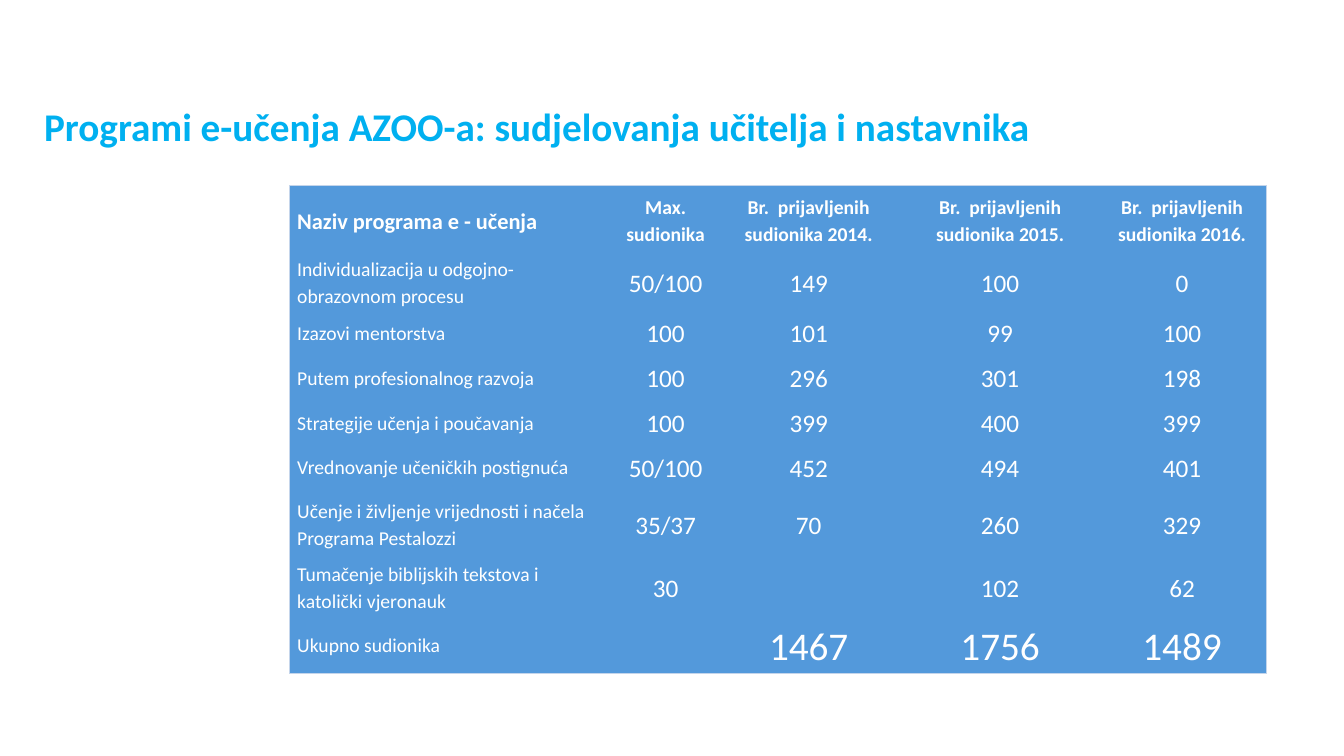
from dataclasses import dataclass

from lxml.etree import SubElement
from pptx import Presentation
from pptx.dml.color import RGBColor
from pptx.enum.text import MSO_ANCHOR, MSO_AUTO_SIZE, PP_ALIGN
from pptx.oxml.ns import qn
from pptx.util import Cm, Pt


@dataclass(frozen=True)
class Theme:
    font: str = "Calibri"
    title: str = "00B0F0"
    fill: str = "5399DB"
    edge: str = "C4D5EB"
    text: str = "FFFFFF"
    big: int = 28
    value: int = 18
    head: int = 16
    small: int = 14
    plain: str = "{2D5ABB26-0587-4C30-8999-92F81FD0307C}"  # no style, no grid


HEAD = ["Naziv programa e - učenja", "Max. sudionika"] + [
    f"Br.  prijavljenih sudionika {year}." for year in (2014, 2015, 2016)]
ROWS = [
    HEAD,
    ["Individualizacija u odgojno-obrazovnom procesu", "50/100", "149", "100", "0"],
    ["Izazovi mentorstva", "100", "101", "99", "100"],
    ["Putem profesionalnog razvoja", "100", "296", "301", "198"],
    ["Strategije učenja i poučavanja", "100", "399", "400", "399"],
    ["Vrednovanje učeničkih postignuća", "50/100", "452", "494", "401"],
    ["Učenje i življenje vrijednosti i načela Programa Pestalozzi",
     "35/37", "70", "260", "329"],
    ["Tumačenje biblijskih tekstova i katolički vjeronauk", "30", "", "102", "62"],
    ["Ukupno sudionika", "", "1467", "1756", "1489"],
]
WIDTHS = [8.23, 2.49, 4.72, 4.93, 4.24]
HEIGHTS = [1.7, 1.42] + [1.13] * 4 + [1.75, 1.42, 1.47]


def put(frame, text, *, font, size, color, bold=False,
        align=PP_ALIGN.LEFT, space=1.0):
    """Write one formatted paragraph into a text frame."""
    para = frame.paragraphs[0]
    para.alignment = align
    para.line_spacing = space
    para.space_before = Pt(0)
    run = para.add_run()
    run.text = text
    run.font.name = font
    run.font.size = Pt(size)
    run.font.bold = bold
    run.font.color.rgb = RGBColor.from_string(color)


class Deck:
    def __init__(self, theme):
        self.theme = theme
        self.file = Presentation()
        self.file.slide_width = Cm(33.87)
        self.file.slide_height = Cm(19.05)
        self.slide = self.file.slides.add_slide(self.file.slide_layouts[5])

    def title(self, text, left, top, width, height):
        box = self.slide.shapes.title
        box.left, box.top = Cm(left), Cm(top)
        box.width, box.height = Cm(width), Cm(height)
        frame = box.text_frame
        frame.word_wrap = True
        frame.auto_size = MSO_AUTO_SIZE.SHAPE_TO_FIT_TEXT
        frame.vertical_anchor = MSO_ANCHOR.TOP
        put(frame, text, font=self.theme.font, size=self.theme.big,
            color=self.theme.title, bold=True)

    def edge(self, cell, side):
        props = cell._tc.get_or_add_tcPr()
        line = SubElement(props, qn(f"a:ln{side}"), w=str(Pt(0.5)))
        fill = SubElement(line, qn("a:solidFill"))
        SubElement(fill, qn("a:srgbClr"), val=self.theme.edge)

    def size(self, row, col, last):
        if col == 0:
            return self.theme.head if row == 0 else self.theme.small
        if row == 0:
            return self.theme.small
        return self.theme.big if row == last else self.theme.value

    def table(self, rows, left, top, widths, heights):
        frame = self.slide.shapes.add_table(
            len(rows), len(widths), Cm(left), Cm(top),
            Cm(sum(widths)), Cm(sum(heights)))
        for style in frame.element.iter(qn("a:tableStyleId")):
            style.text = self.theme.plain
        grid = frame.table
        grid.first_row = grid.horz_banding = False
        for col, width in zip(grid.columns, widths):
            col.width = Cm(width)
        for row, height in zip(grid.rows, heights):
            row.height = Cm(height)

        end, last = len(widths) - 1, len(rows) - 1
        for r, row in enumerate(rows):
            for c, text in enumerate(row):
                cell = grid.cell(r, c)
                # Outer border only
                outer = {"L": c == 0, "R": c == end, "T": r == 0, "B": r == last}
                for side, shown in outer.items():
                    if shown:
                        self.edge(cell, side)
                cell.fill.solid()
                cell.fill.fore_color.rgb = RGBColor.from_string(self.theme.fill)
                cell.vertical_anchor = MSO_ANCHOR.MIDDLE
                cell.margin_left = cell.margin_right = Cm(0.19)
                cell.margin_top = cell.margin_bottom = 0
                if text:
                    put(cell.text_frame, text, font=self.theme.font,
                        size=self.size(r, c, last), color=self.theme.text,
                        bold=r == 0, space=1.15,
                        align=PP_ALIGN.CENTER if c else PP_ALIGN.LEFT)


def main():
    deck = Deck(Theme())
    # Heading
    deck.title("Programi e-učenja AZOO-a: sudjelovanja učitelja i nastavnika",
               0.86, 2.46, 29.06, 1.45)
    # Participants by programme and year
    deck.table(ROWS, 7.3, 4.68, WIDTHS, HEIGHTS)
    deck.file.save("out.pptx")


if __name__ == "__main__":
    main()
